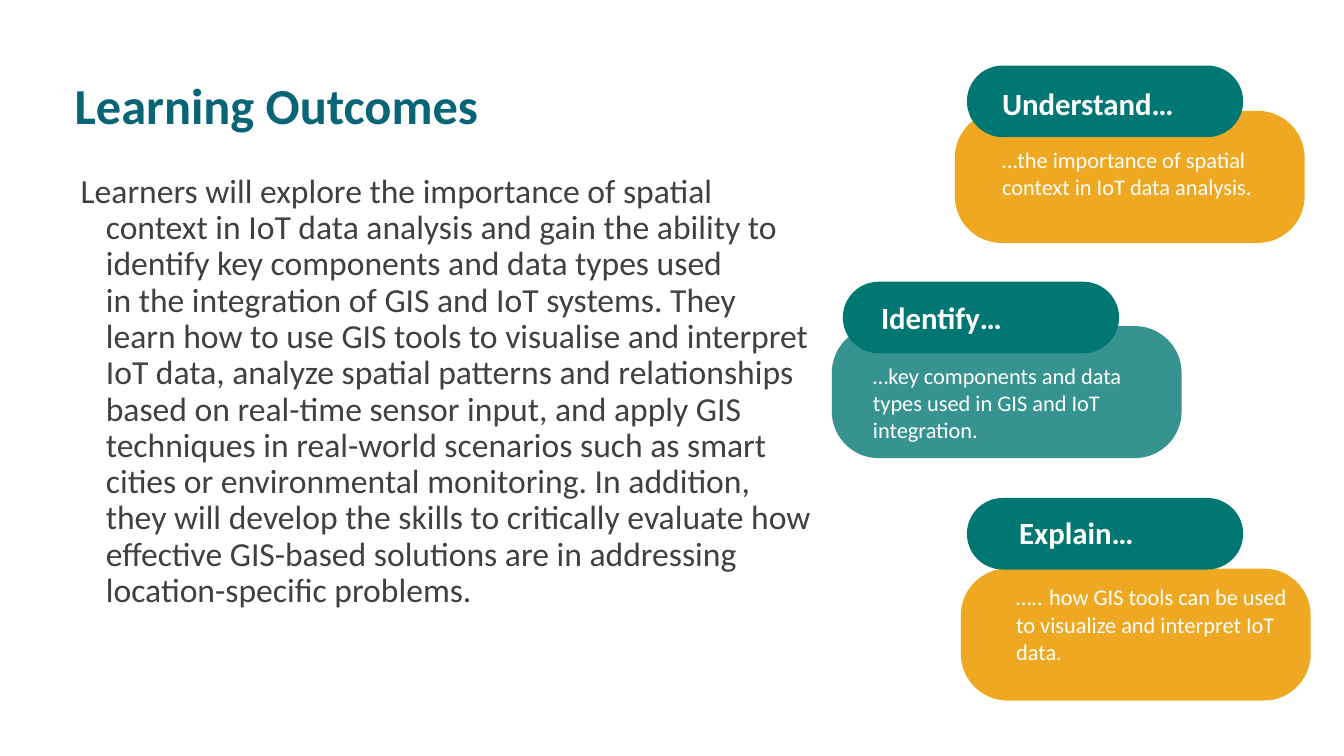
from dataclasses import dataclass

from lxml import etree
from pptx import Presentation
from pptx import util as u
from pptx.dml import color
from pptx.enum import shapes, text
from pptx.oxml import ns


@dataclass(frozen=True)
class Theme:
    """Hold the colours, font and type sizes of the slide."""

    teal: str = "007772"
    amber: str = "EEA821"
    title_ink: str = "086575"
    body_ink: str = "404040"
    black: str = "000000"
    white: str = "FFFFFF"
    font: str = "Calibri"
    title_size: int = 36
    body_size: int = 24
    heading_size: int = 22
    gap_size: int = 20
    detail_size: int = 16


THEME = Theme()
TOP, ROW_STEP = 0.65, 2.145
PILL_SIZE = (2.74, 0.71)
PANEL_SIZE = (3.47, 1.31)
PILL_ROUNDING, PANEL_ROUNDING = 0.5, 0.355

SUMMARY = (
    "Learners will explore the importance of spatial context in IoT data analysis "
    "and gain the ability to identify key components and data types used \v"
    "in the integration of GIS and IoT systems. They learn how to use GIS tools to "
    "visualise and interpret IoT data, analyze spatial patterns and relationships "
    "based on real-time sensor input, and apply GIS techniques in real-world "
    "scenarios such as smart cities or environmental monitoring. In addition, they "
    "will develop the skills to critically evaluate how effective GIS-based "
    "solutions are in addressing location-specific problems."
)

DETAIL = (THEME.detail_size, THEME.white)
OUTCOMES = [
    dict(left=9.59, fill=THEME.amber, opacity=100, panel=(-0.12, 0.45),
         heading="Understand…", heading_box=(0.25, 0.14, 2.74, 0.47),
         detail=[("…the importance of spatial context in IoT data analysis.", *DETAIL)],
         detail_box=(0.25, 0.75, 3.2, 0.91)),
    dict(left=8.36, fill=THEME.teal, opacity=79, panel=(-0.11, 0.44),
         heading="Identify…", heading_box=(0.28, 0.12, 2.22, 0.47),
         detail=[("…key components and data types used in GIS and IoT integration.", *DETAIL)],
         detail_box=(0.2, 0.75, 3.16, 1.18)),
    dict(left=9.59, fill=THEME.amber, opacity=100, panel=(-0.06, 0.7),
         heading="Explain…", heading_box=(0.42, 0.11, 2.12, 0.47),
         detail=[("…..", *DETAIL), (" ", THEME.gap_size, THEME.black),
                 ("how GIS tools can be used to visualize and interpret IoT data.", *DETAIL)],
         detail_box=(0.39, 0.74, 3.06, 1.25)),
]


def apply(target, values):
    """Set every attribute in a dict of format values."""
    for name, value in values.items():
        setattr(target, name, value)


def style_font(font, size, ink, bold=False):
    """Give a font the theme face with a size, colour and weight."""
    apply(font, dict(name=THEME.font, size=u.Pt(size), bold=bold))
    font.color.rgb = color.RGBColor.from_string(ink)


def fill_placeholder(holder, box, words, size, ink, bold=False, hanging=0):
    """Place a template placeholder and write one unbulleted paragraph in it."""
    apply(holder, dict(zip(("left", "top", "width", "height"), map(u.Inches, box))))
    frame = holder.text_frame
    frame.text = words
    apply(frame, dict(word_wrap=True, auto_size=text.MSO_AUTO_SIZE.NONE,
                      vertical_anchor=text.MSO_ANCHOR.TOP))
    paragraph = frame.paragraphs[0]
    apply(paragraph, dict(alignment=text.PP_ALIGN.LEFT, line_spacing=0.9,
                          space_before=u.Pt(0)))
    properties = paragraph._p.get_or_add_pPr()
    properties.set("marL", str(u.Inches(hanging)))
    properties.set("indent", str(-u.Inches(hanging)))
    etree.SubElement(properties, ns.qn("a:buNone"))
    for run in paragraph.runs:
        style_font(run.font, size, ink, bold)


def add_rounded(slide, box, rounding, fill, opacity=100):
    """Add a borderless rounded block."""
    block = slide.shapes.add_shape(shapes.MSO_SHAPE.ROUNDED_RECTANGLE, *map(u.Inches, box))
    block.adjustments[0] = rounding
    block.shadow.inherit = False
    block.fill.solid()
    block.fill.fore_color.rgb = color.RGBColor.from_string(fill)
    block.line.fill.background()
    if opacity < 100:
        tint = block.fill._xPr.find(ns.qn("a:solidFill"))[0]
        etree.SubElement(tint, ns.qn("a:alpha")).set("val", str(opacity * 1000))


def add_words(slide, box, pieces, bold=False):
    """Add a wrapping text box made of (words, size, ink) pieces."""
    frame = slide.shapes.add_textbox(*map(u.Inches, box)).text_frame
    frame.word_wrap = True
    for words, size, ink in pieces:
        run = frame.paragraphs[0].add_run()
        run.text = words
        style_font(run.font, size, ink, bold)


def add_outcome(slide, left, top, outcome):
    """Build one outcome card relative to the corner of its heading pill."""
    def within(offset):
        """Shift a box from card to slide coordinates."""
        return (left + offset[0], top + offset[1], *offset[2:])

    add_rounded(slide, within(outcome["panel"] + PANEL_SIZE), PANEL_ROUNDING,
                outcome["fill"], outcome["opacity"])
    add_rounded(slide, (left, top, *PILL_SIZE), PILL_ROUNDING, THEME.teal)
    heading = [(outcome["heading"], THEME.heading_size, THEME.white)]
    add_words(slide, within(outcome["heading_box"]), heading, bold=True)
    add_words(slide, within(outcome["detail_box"]), outcome["detail"])


def build_outcomes_slide(deck):
    """Build the slide with its title, summary and three outcome cards."""
    slide = deck.slides.add_slide(deck.slide_layouts[1])
    fill_placeholder(slide.shapes.title, (0.64, 0.75, 8, 0.71), "Learning Outcomes",
                     THEME.title_size, THEME.title_ink, bold=True)
    fill_placeholder(slide.placeholders[1], (0.7, 1.68, 7.45, 5.41), SUMMARY,
                     THEME.body_size, THEME.body_ink, hanging=0.25)
    for row, outcome in enumerate(OUTCOMES):
        add_outcome(slide, outcome["left"], TOP + row * ROW_STEP, outcome)


def main():
    """Create the deck and save it."""
    deck = Presentation()
    apply(deck, dict(slide_width=u.Inches(13.33), slide_height=u.Inches(7.5)))
    build_outcomes_slide(deck)
    deck.save("out.pptx")


if __name__ == "__main__":
    main()
